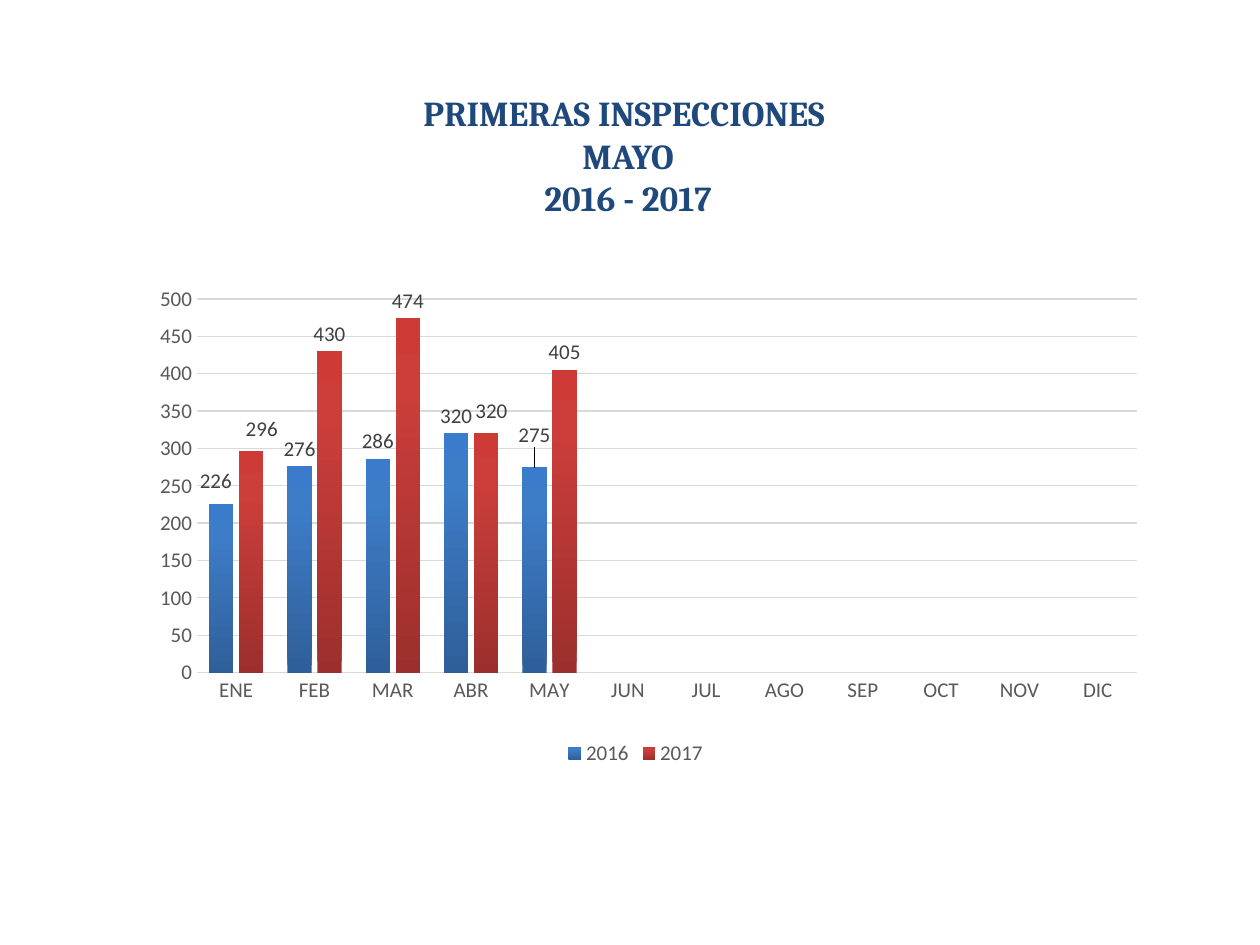
from dataclasses import dataclass

from lxml import etree
from pptx import Presentation
from pptx.chart.data import CategoryChartData
from pptx.dml.color import RGBColor
from pptx.enum.chart import XL_CHART_TYPE, XL_LABEL_POSITION, XL_LEGEND_POSITION, XL_TICK_MARK
from pptx.enum.text import MSO_ANCHOR, PP_ALIGN
from pptx.oxml import parse_xml
from pptx.oxml.ns import nsdecls, qn
from pptx.util import Inches, Pt

COLUMNS = XL_CHART_TYPE.COLUMN_CLUSTERED
OUTSIDE_END = XL_LABEL_POSITION.OUTSIDE_END
LEGEND_BOTTOM = XL_LEGEND_POSITION.BOTTOM
NO_TICK = XL_TICK_MARK.NONE
CENTER = PP_ALIGN.CENTER
TOP = MSO_ANCHOR.TOP
TITLE_ONLY = 5


@dataclass(frozen=True)
class Theme:
    title_font: str = "Cambria"
    chart_font: str = "Calibri"
    title_size: int = 20
    chart_size: int = 12
    title: str = "1F497D"
    axis_text: str = "595959"
    label_text: str = "404040"
    rule: str = "D9D9D9"


@dataclass(frozen=True)
class YearSeries:
    year: str
    inspections: tuple[int, ...]
    gradient: tuple[tuple[int, str], ...]  # percent along the bar, colour
    label_shifts: dict[int, tuple[float, float]]  # month index: share of chart size


THEME = Theme()
TITLE = "PRIMERAS INSPECCIONES \nMAYO\n2016 - 2017"
MONTHS = ("ENE", "FEB", "MAR", "ABR", "MAY", "JUN",
          "JUL", "AGO", "SEP", "OCT", "NOV", "DIC")
YEARS = (
    YearSeries("2016", (226, 276, 286, 320, 275),
               ((0, "2F5F99"), (80, "3D7CC7"), (100, "3A7CCB")),
               {0: (-0.005, -0.01), 4: (0, -0.03)}),
    YearSeries("2017", (296, 430, 474, 320, 405),
               ((0, "9C2F2D"), (80, "CB3E3A"), (100, "CE3B37")),
               {0: (0.01, -0.01), 3: (0.005, -0.01)}),
)


def style_font(font, name: str, size: int, color: str, bold: bool = False) -> None:
    font.name = name
    font.size = Pt(size)
    font.bold = bold
    font.color.rgb = RGBColor.from_string(color)


def style_chart_font(font, color: str) -> None:
    style_font(font, THEME.chart_font, THEME.chart_size, color)


def style_line(line, width: float) -> None:
    line.color.rgb = RGBColor.from_string(THEME.rule)
    line.width = Pt(width)


def manual_layout(**settings) -> etree._Element:
    values = "".join(f'<c:{tag} val="{value}"/>' for tag, value in settings.items())
    return parse_xml(f'<c:layout {nsdecls("c")}><c:manualLayout>{values}'
                     '</c:manualLayout></c:layout>')


def fill_gradient(series, stops: tuple[tuple[int, str], ...]) -> None:
    """Fill the bars with a gradient that runs from bottom to top."""
    stop_xml = "".join(f'<a:gs pos="{percent * 1000}"><a:srgbClr val="{color}"/></a:gs>'
                       for percent, color in stops)
    properties = series._element.get_or_add_spPr()
    properties.insert(0, parse_xml(
        f'<a:gradFill {nsdecls("a")} rotWithShape="1"><a:gsLst>{stop_xml}</a:gsLst>'
        '<a:lin ang="16200000" scaled="0"/></a:gradFill>'))


def style_series(series, year: YearSeries) -> None:
    fill_gradient(series, year.gradient)
    series.invert_if_negative = False
    labels = series.data_labels
    labels.show_value = True
    labels.position = OUTSIDE_END
    style_chart_font(labels.font, THEME.label_text)

    # Labels moved clear of the neighbouring bars
    for month in year.label_shifts:
        label = series.points[month].data_label
        style_chart_font(label.font, THEME.label_text)
        label.position = OUTSIDE_END
    for label_xml in series._element.iter(qn("c:dLbl")):
        month = int(label_xml.find(qn("c:idx")).get("val"))
        x, y = year.label_shifts[month]
        label_xml.insert(1, manual_layout(x=x, y=y))


def add_title(slide) -> None:
    title = slide.shapes.title
    title.left, title.top = Inches(2.72), Inches(0.68)
    title.width, title.height = Inches(4.53), Inches(1.11)
    frame = title.text_frame
    frame.text = TITLE
    frame.word_wrap = True
    frame.vertical_anchor = TOP
    for paragraph in frame.paragraphs:
        paragraph.alignment = CENTER
        for run in paragraph.runs:
            style_font(run.font, THEME.title_font, THEME.title_size, THEME.title, True)


def add_inspections_chart(slide) -> None:
    data = CategoryChartData()
    data.categories = MONTHS
    for year in YEARS:
        pending = (None,) * (len(MONTHS) - len(year.inspections))
        data.add_series(year.year, year.inspections + pending)
    chart = slide.shapes.add_chart(COLUMNS, Inches(0.83), Inches(2.18),
                                   Inches(8.43), Inches(3.94), data).chart
    chart.has_title = False
    style_chart_font(chart.font, THEME.axis_text)

    # Axes
    months, counts = chart.category_axis, chart.value_axis
    for axis in (months, counts):
        axis.major_tick_mark = axis.minor_tick_mark = NO_TICK
        style_chart_font(axis.tick_labels.font, THEME.axis_text)
    style_line(months.format.line, 1)
    counts.format.line.fill.background()
    counts.has_major_gridlines = True
    style_line(counts.major_gridlines.format.line, 0.75)
    counts.minimum_scale, counts.maximum_scale, counts.major_unit = 0, 500, 50

    # Legend
    chart.has_legend = True
    chart.legend.position = LEGEND_BOTTOM
    chart.legend.include_in_layout = False
    style_chart_font(chart.legend.font, THEME.axis_text)

    # Bars and plot area
    plot = chart.plots[0]
    plot.gap_width, plot.overlap = 100, -24
    plot.vary_by_categories = False
    for series, year in zip(plot.series, YEARS):
        style_series(series, year)
    plot_area = chart._chartSpace.chart.plotArea
    for automatic in plot_area.findall(qn("c:layout")):
        plot_area.remove(automatic)
    plot_area.insert(0, manual_layout(layoutTarget="inner", xMode="edge", yMode="edge",
                                      x=0.087, y=0.049, w=0.885, h=0.753))


def main() -> None:
    presentation = Presentation()
    presentation.slide_width, presentation.slide_height = Inches(10), Inches(7.5)
    slide = presentation.slides.add_slide(presentation.slide_layouts[TITLE_ONLY])
    add_title(slide)
    add_inspections_chart(slide)
    presentation.save("out.pptx")


if __name__ == "__main__":
    main()
